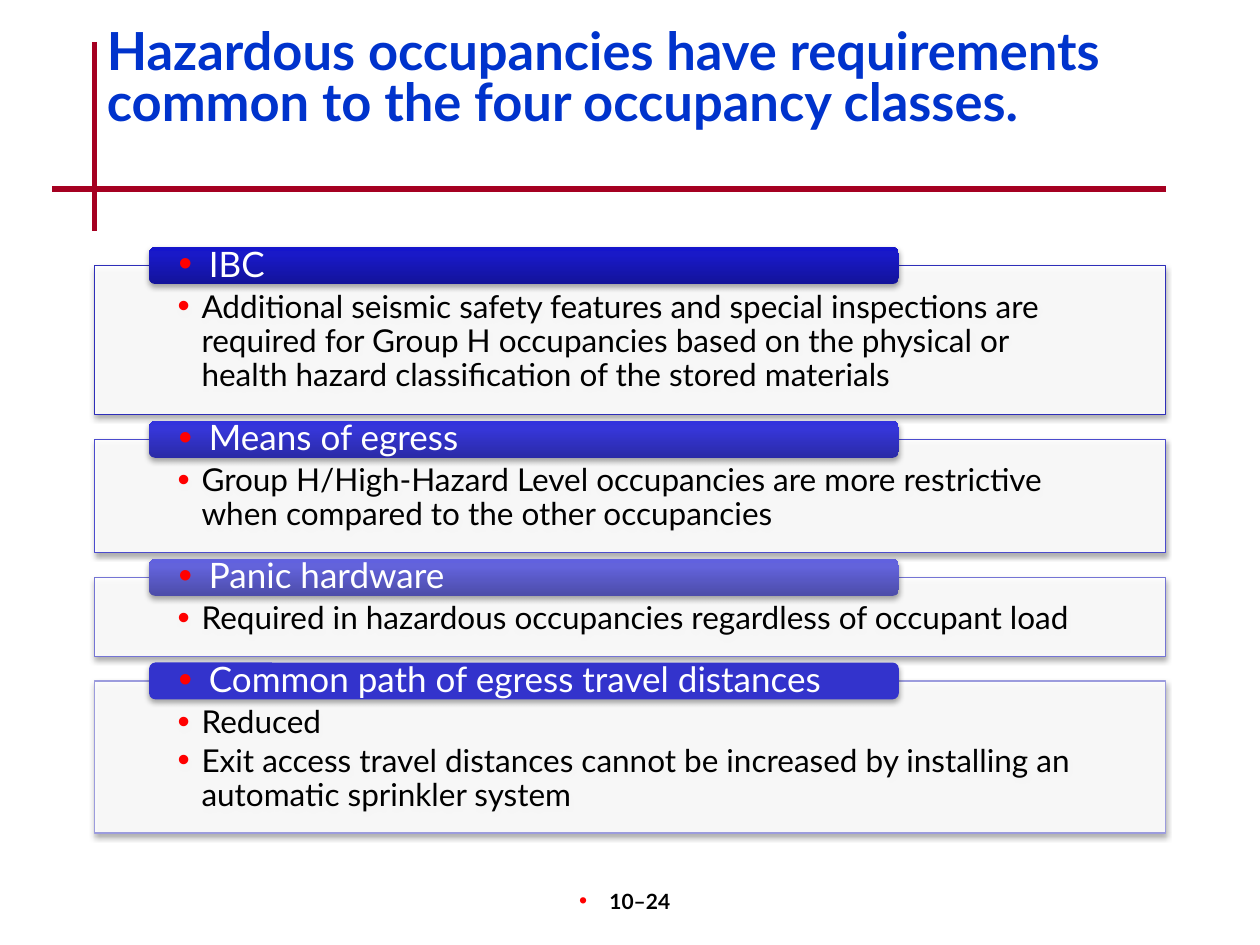
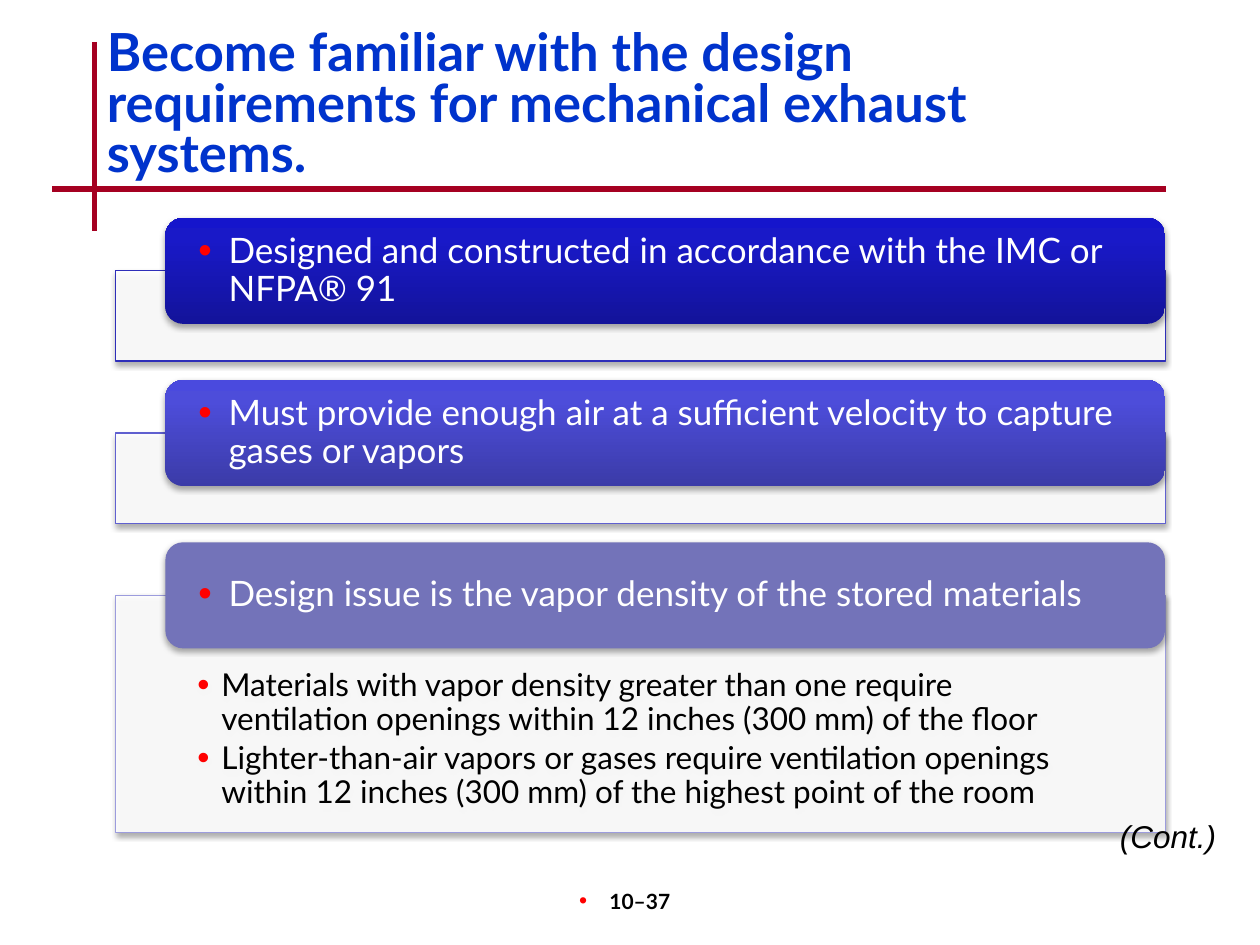
from dataclasses import dataclass

from lxml import etree
from copy import deepcopy
from pptx import Presentation
from pptx.dml.color import RGBColor
from pptx.enum.shapes import MSO_CONNECTOR, MSO_SHAPE as SHAPE
from pptx.enum.text import MSO_ANCHOR as ANCHOR, PP_ALIGN as ALIGN
from pptx.oxml import parse_xml
from pptx.oxml.ns import nsdecls, qn
from pptx.util import Inches, Pt


@dataclass(frozen=True)
class Theme:
    font: str = "Lato"
    note_font: str = "Arial"
    title: str = "0033CC"
    rule: str = "A50021"
    ink: str = "000000"
    paper: str = "FFFFFF"
    bullet: str = "FF0000"
    title_size: int = 30
    bar_size: int = 20
    body_size: int = 18
    footer_size: int = 12


theme = Theme()
UNIT = Inches(10) // 120  # the grid has 120 columns and 90 rows of square cells

SHADOW = parse_xml(
    f'<a:outerShdw {nsdecls("a")} blurRad="40000" dist="23000" dir="5400000" rotWithShape="0">'
    f'<a:srgbClr val="{theme.ink}"><a:alpha val="35000"/></a:srgbClr></a:outerShdw>')


def cells(*counts):
    """Turn grid counts into lengths."""
    return [round(count * UNIT) for count in counts]


def write(shape, texts, size, color, font=theme.font, bold=False, italic=False,
          align=ALIGN.LEFT, anchor=ANCHOR.TOP, spacing=1.0, after=0, indent=0, margins=None):
    """Fill a shape with paragraphs; an indent, in inches, also makes them bulleted."""
    frame = shape.text_frame
    frame.word_wrap = True
    frame.vertical_anchor = anchor
    if margins:
        (frame.margin_left, frame.margin_top,
         frame.margin_right, frame.margin_bottom) = map(Inches, margins)
    for index, text in enumerate(texts):
        para = frame.paragraphs[0] if index == 0 else frame.add_paragraph()
        if indent:
            properties = para._p.get_or_add_pPr()
            properties.set("marL", str(Inches(indent)))
            properties.set("indent", str(-Inches(indent)))
            color_tag = etree.SubElement(properties, qn("a:buClr"))
            etree.SubElement(color_tag, qn("a:srgbClr"), val=theme.bullet)
            etree.SubElement(properties, qn("a:buSzPct"), val="110000")
            etree.SubElement(properties, qn("a:buFont"), typeface=theme.note_font)
            etree.SubElement(properties, qn("a:buChar"), char="•")
        para.alignment = align
        para.line_spacing = spacing
        para.space_after = Pt(after)
        span = para.add_run()
        span.text = text
        span.font.name = font
        span.font.size = Pt(size)
        span.font.bold = bold
        span.font.italic = italic
        span.font.color.rgb = RGBColor.from_string(color)


# Each section: panel height, panel line, bar colours, bar text, body texts
slides = [
    dict(
        title="Hazardous occupancies have requirements common to the four occupancy classes.",
        title_top=2.3, number="10–24", note=None,
        panel_left=9, panel_width=102, first_top=25.3, gap=2.35,
        bar_left=14.2, bar_width=71.4, bar_height=3.5, overlap=1.75,
        body_margins=(0.66, 0.2, 0.66, 0.14),
        sections=[
            (14.2, "2E2EB9", ["13139A", "1919C8", "1515CC"], "IBC",
             ["Additional seismic safety features and special inspections are required for "
              "Group H occupancies based on the physical or health hazard classification "
              "of the stored materials"]),
            (10.8, "4B4BCD", ["2A2AA7", "3636D9", "3333DD"], "Means of egress",
             ["Group H/High-Hazard Level occupancies are more restrictive when compared "
              "to the other occupancies"]),
            (7.5, "7474D4", ["4C4CA9", "6363DB", "6161DF"], "Panic hardware",
             ["Required in hazardous occupancies regardless of occupant load"]),
            (14.5, "9C9CDD", ["3333CC"], "Common path of egress travel distances",
             ["Reduced",
              "Exit access travel distances cannot be increased by installing an "
              "automatic sprinkler system"]),
        ]),
    dict(
        title="Become familiar with the design requirements for mechanical exhaust systems.",
        title_top=2.4, number="10–37", note="(Cont.)",
        panel_left=11, panel_width=100, first_top=25.8, gap=6.85,
        bar_left=15.75, bar_width=95.2, bar_height=10.1, overlap=5.05,
        body_margins=(0.65, 0.59, 0.65, 0.14),
        sections=[
            (8.6, "2E2EB9", ["13139A", "1919C8", "1515CC"],
             "Designed and constructed in accordance with the IMC or NFPA® 91", []),
            (8.6, "6060D0", ["3B3BA8", "4D4DDA", "4A4ADE"],
             "Must provide enough air at a sufficient velocity to capture gases or vapors", []),
            (22.6, "9C9CDD", ["7373B9"],
             "Design issue is the vapor density of the stored materials",
             ["Materials with vapor density greater than one require ventilation openings "
              "within 12 inches (300 mm) of the floor",
              "Lighter-than-air vapors or gases require ventilation openings within "
              "12 inches (300 mm) of the highest point of the room"]),
        ]),
]

deck = Presentation()
deck.slide_width, deck.slide_height = cells(120, 90)

for content in slides:
    page = deck.slides.add_slide(deck.slide_layouts[6])
    shapes = page.shapes

    for ends in [(9, 4, 9, 22), (5, 18, 111, 18)]:
        rule = shapes.add_connector(MSO_CONNECTOR.STRAIGHT, *cells(*ends))
        rule.line.color.rgb = RGBColor.from_string(theme.rule)
        rule.line.width = Pt(3)
        etree.SubElement(rule._element.spPr, qn("a:effectLst"))

    footer = shapes.add_textbox(*cells(47, 84, 25, 6))
    write(footer, [content["number"]], theme.footer_size, theme.ink,
          bold=True, align=ALIGN.CENTER, indent=0.24)
    title = shapes.add_textbox(*cells(9, content["title_top"], 102, 14))
    write(title, [content["title"]], theme.title_size, theme.title, bold=True, spacing=0.8)

    top = content["first_top"]
    for height, outline, bar_colors, heading, body in content["sections"]:
        panel = shapes.add_shape(SHAPE.RECTANGLE, *cells(
            content["panel_left"], top, content["panel_width"], height))
        panel.fill.solid()
        panel.fill.fore_color.rgb = RGBColor.from_string(theme.paper)
        paper = panel._element.spPr.find(qn("a:solidFill")).find(qn("a:srgbClr"))
        etree.SubElement(paper, qn("a:alpha"), val="90000")
        panel.line.color.rgb = RGBColor.from_string(outline)
        panel.line.width = Pt(0.75)
        if body:
            write(panel, body, theme.body_size, theme.ink, spacing=0.9, after=2.7,
                  indent=0.19, margins=content["body_margins"])

        bar = shapes.add_shape(SHAPE.ROUNDED_RECTANGLE, *cells(
            content["bar_left"], top - content["overlap"],
            content["bar_width"], content["bar_height"]))
        if len(bar_colors) == 1:
            bar.fill.solid()
            bar.fill.fore_color.rgb = RGBColor.from_string(bar_colors[0])
        else:
            bar.fill.gradient()
            bar.fill.gradient_angle = 90
            stop_list = bar._element.spPr.find(qn("a:gradFill")).find(qn("a:gsLst"))
            stop_list.append(deepcopy(stop_list[-1]))
            for stop, position, color in zip(bar.fill.gradient_stops, (0, 0.8, 1), bar_colors):
                stop.position = position
                stop.color.rgb = RGBColor.from_string(color)
        bar.line.fill.background()
        write(bar, [heading], theme.bar_size, theme.paper, anchor=ANCHOR.MIDDLE,
              spacing=0.9, indent=0.24, margins=(0.22, 0, 0.22, 0))

        for shape in (panel, bar):
            shape.shadow.inherit = False
            shape._element.spPr.find(qn("a:effectLst")).append(deepcopy(SHADOW))
        top += height + content["gap"]

    if content["note"]:
        note = shapes.add_textbox(*cells(97, 77.2, 20, 4.8))
        write(note, [content["note"]], theme.body_size, theme.ink,
              font=theme.note_font, italic=True, align=ALIGN.RIGHT)

deck.save("out.pptx")
